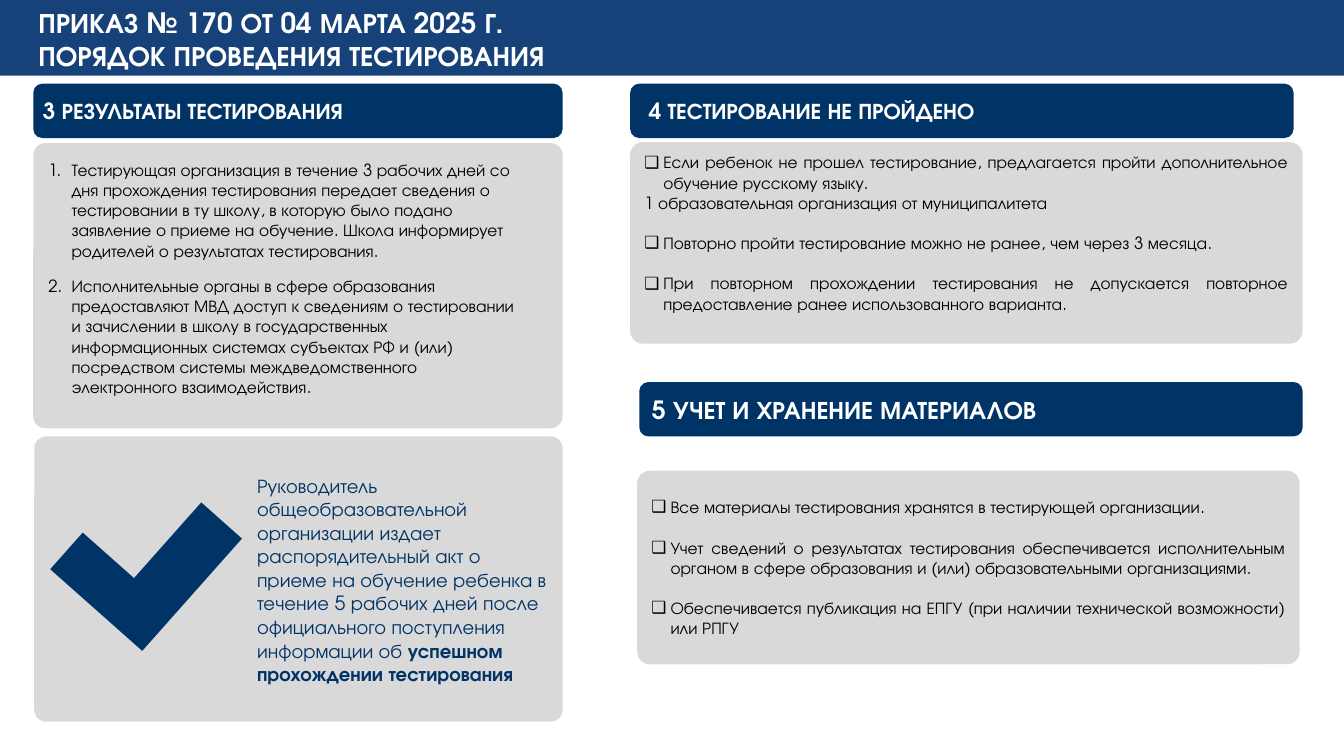
from lxml import etree
from pptx import Presentation
from pptx import util as u
from pptx.dml.color import RGBColor
from pptx.enum import shapes, text
from pptx.oxml.ns import qn

FONT = "TeX Gyre Adventor"
HUES = {"band": "174179", "navy": "003366", "grey": "D9D9D9",
        "white": "FFFFFF", "black": "000000"}
W, H = 13.33, 7.5
LINE = 14.4  # one line of 12 pt text, in points

TITLE = "ПРИКАЗ № 170 ОТ 04 МАРТА 2025 Г.\vПОРЯДОК ПРОВЕДЕНИЯ ТЕСТИРОВАНИЯ"

# box, left inset, size, text
HEADS = [
    ((0.33, 0.83, 5.25, 0.54), 0.07, 16, "3 РЕЗУЛЬТАТЫ ТЕСТИРОВАНИЯ"),
    ((6.25, 0.83, 6.58, 0.54), 0.16, 16, "4 ТЕСТИРОВАНИЕ НЕ ПРОЙДЕНО"),
    ((6.34, 3.79, 6.58, 0.54), 0.1, 18, "5 УЧЕТ И ХРАНЕНИЕ МАТЕРИАЛОВ"),
]

# box, corner share
PANELS = [
    ((0.33, 1.42, 5.25, 2.83), 0.042),
    ((0.34, 4.33, 5.24, 2.83), 0.042),
    ((6.25, 1.41, 6.67, 2), 0.064),
    ((6.32, 4.67, 6.57, 1.92), 0.064),
]

# Paragraphs are (mark, space before, text)
RESULTS = [
    ("1.", 0, "Тестирующая организация в течение 3 рабочих дней со дня прохождения "
     "тестирования передает сведения о тестировании в ту школу, в которую было подано "
     "заявление о приеме на обучение. Школа информирует родителей о результатах "
     "тестирования."),
    ("1.", 10.9, "Исполнительные органы в сфере образования предоставляют МВД доступ к "
     "сведениям о тестировании и зачислении в школу в государственных информационных "
     "системах субъектах РФ и (или) посредством системы междведомственного "
     "электронного взаимодействия."),
]
FAILED = [
    ("❑", 0, "Если ребенок не прошел тестирование, предлагается пройти дополнительное "
     "обучение русскому языку."),
    ("", 0, "1 образовательная организация от муниципалитета"),
    ("❑", LINE, "Повторно пройти тестирование можно не ранее, чем через 3 месяца."),
    ("❑", LINE, "При повторном прохождении тестирования не допускается повторное "
     "предоставление ранее использованного варианта."),
]
RECORDS = [
    ("❑", 0, "Все материалы тестирования хранятся в тестирующей организации."),
    ("❑", LINE, "Учет сведений о результатах тестирования обеспечивается исполнительным "
     "органом в сфере образования и (или) образовательными организациями."),
    ("❑", LINE, "Обеспечивается публикация на ЕПГУ (при наличии технической возможности) "
     "или РПГУ"),
]
NOTE = [("", 0, "Руководитель общеобразовательной организации издает распорядительный акт "
         "о приеме на обучение ребенка в течение 5 рабочих дней после официального "
         "поступления информации об ")]
NOTE_END = "успешном прохождении тестирования"

# placeholder, box, side inset, hang, size, colour, alignment, paragraphs
LEFT, FULL = text.PP_ALIGN.LEFT, text.PP_ALIGN.JUSTIFY
BODIES = [
    (1, (0.38, 1.42, 4.87, 2.68), 0.1, 0.23, 12, "black", LEFT, RESULTS),
    (2, (6.25, 1.41, 6.67, 1.8), 0.14, 0.19, 12, "black", FULL, FAILED),
    (3, (2.41, 4.91, 3.17, 1.68), 0.14, 0, 14, "navy", LEFT, NOTE),
    (4, (6.32, 4.67, 6.57, 1.92), 0.14, 0.19, 12, "black", FULL, RECORDS),
]

deck = Presentation()
deck.slide_width, deck.slide_height = u.Inches(W), u.Inches(H)
slide = deck.slides.add_slide(deck.slide_layouts[4])
title = slide.shapes.title


def color(key):
    return RGBColor.from_string(HUES[key])


def place(shape, box):
    shape.left, shape.top, shape.width, shape.height = map(u.Inches, box)


def draw(kind, box, fill, *adj):
    """Add a plain filled shape behind the placeholders."""
    shape = slide.shapes.add_shape(kind, *map(u.Inches, box))
    for i, share in enumerate(adj):
        shape.adjustments[i] = share
    shape.fill.solid()
    shape.fill.fore_color.rgb = color(fill)
    shape.line.fill.background()
    shape.shadow.inherit = False
    title._element.addprevious(shape._element)
    return shape


def frame(shape, side, anchor=text.MSO_ANCHOR.MIDDLE, edge=0.05):
    tf = shape.text_frame
    tf.word_wrap = True
    tf.auto_size = text.MSO_AUTO_SIZE.NONE
    tf.vertical_anchor = anchor
    tf.margin_left = tf.margin_right = u.Inches(side)
    tf.margin_top = tf.margin_bottom = u.Inches(edge)
    return tf


def style(para, size, hue, bold=False, align=LEFT):
    para.alignment = align
    for run in para.runs:
        font = run.font
        font.name, font.size, font.bold = FONT, u.Pt(size), bold
        font.color.rgb = color(hue)


def bullet(para, mark, hang):
    props = para._p.get_or_add_pPr()
    hang = u.Inches(hang) if mark else 0
    props.set("marL", str(hang))
    props.set("indent", str(-hang))
    if mark == "1.":
        etree.SubElement(props, qn("a:buAutoNum"), type="arabicPeriod")
    elif mark:
        etree.SubElement(props, qn("a:buChar"), char=mark)
    else:
        etree.SubElement(props, qn("a:buNone"))


ROUND = shapes.MSO_SHAPE.ROUNDED_RECTANGLE
draw(shapes.MSO_SHAPE.RECTANGLE, (0, 0, W, H / 10), "band")
place(title, (0.37, 0.04, 10.96, 0.69))
tf = frame(title, 0.01, text.MSO_ANCHOR.TOP, 0.01)
tf.text = TITLE
style(tf.paragraphs[0], 20, "white", True)

for box, share in PANELS:
    draw(ROUND, box, "grey", share)

for box, inset, size, words in HEADS:
    tf = frame(draw(ROUND, box, "navy", 0.167), inset)
    tf.text = words
    style(tf.paragraphs[0], size, "white", True)

check = draw(shapes.MSO_SHAPE.CORNER, (0.84, 4.75, 1.22, 1.49), "navy", 0.398, 0.443)
check.rotation = 41.6
check._element.spPr.get_or_add_xfrm().set("flipH", "1")

holders = {h.placeholder_format.idx: h for h in slide.placeholders}
for idx, box, side, hang, size, hue, align, items in BODIES:
    place(holders[idx], box)
    tf = frame(holders[idx], side)
    for i, (mark, gap, words) in enumerate(items):
        para = tf.add_paragraph() if i else tf.paragraphs[0]
        para.text = words
        bullet(para, mark, hang)
        para.space_before = u.Pt(gap)
        if items is NOTE:
            para.add_run().text = NOTE_END
        style(para, size, hue, False, align)
        if items is NOTE:
            para.runs[-1].font.bold = True

deck.save("out.pptx")
